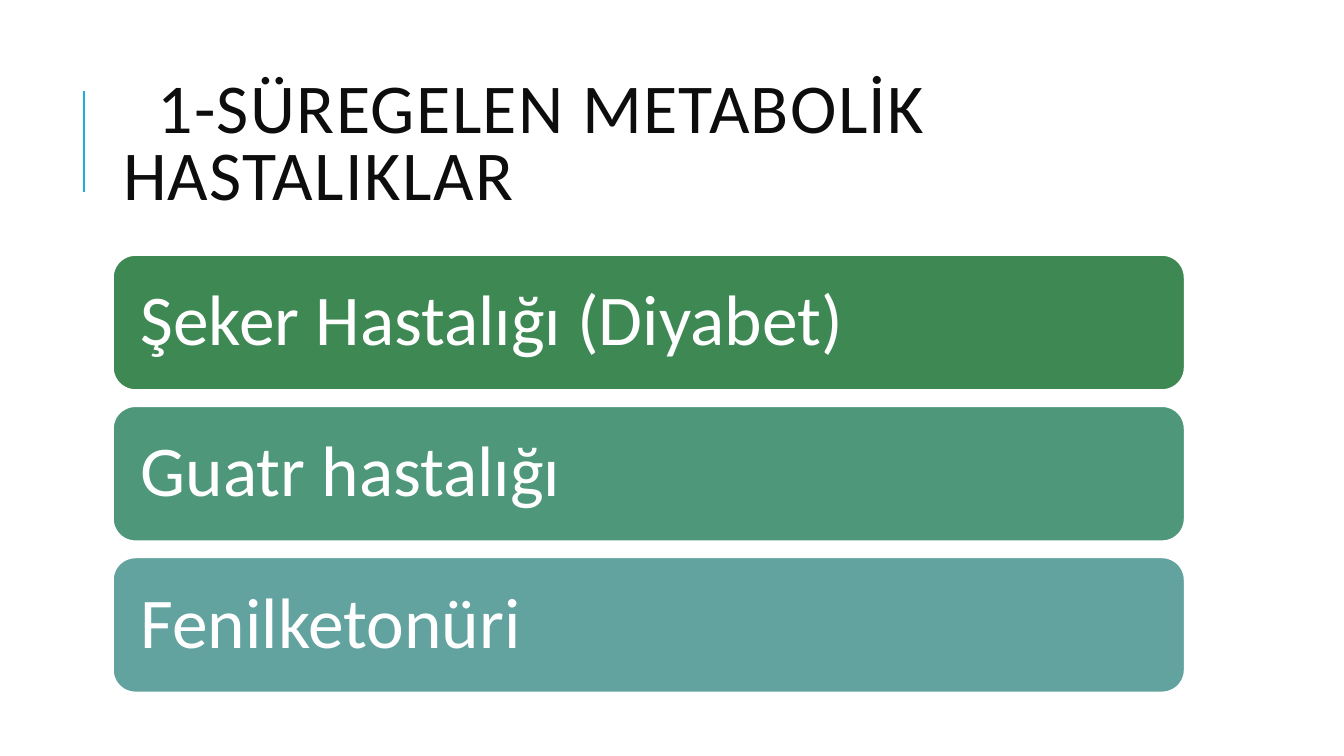
"""Build a slide listing three chronic metabolic diseases."""
import pptx
import pptx.dml.color
import pptx.enum.shapes
import pptx.enum.text
import pptx.oxml.ns
import pptx.util
from lxml import etree

Inches = pptx.util.Inches
Pt = pptx.util.Pt

TITLE = "1-SÜREGELEN METABOLİK HASTALIKLAR"
DISEASES = [
    ("Şeker Hastalığı (Diyabet)", "green"),
    ("Guatr hastalığı", "sea"),
    ("Fenilketonüri", "teal"),
]
COLORS = {
    "green": "3E8853",
    "sea": "4E977B",
    "teal": "62A39F",
    "accent": "1CADE4",
    "ink": "0D0D0D",
    "white": "FFFFFF",
}
FONT = "Calibri"
LEFT, WIDTH = 1.12, 10.63
BAR_TOP, BAR_HEIGHT, BAR_STEP = 2.53, 1.34, 1.5


def color(name):
    return pptx.dml.color.RGBColor.from_string(COLORS[name])


def write(shape, text, size, ink, spacing):
    frame = shape.text_frame
    frame.text = text
    frame.word_wrap = True
    frame.auto_size = pptx.enum.text.MSO_AUTO_SIZE.NONE
    frame.vertical_anchor = pptx.enum.text.MSO_ANCHOR.MIDDLE
    para = frame.paragraphs[0]
    para.alignment = pptx.enum.text.PP_ALIGN.LEFT
    para.line_spacing = spacing
    span = para.runs[0]
    span.font.name = FONT
    span.font.size = Pt(size)
    span.font.color.rgb = color(ink)
    return para


def add_title(slide):
    title = slide.shapes.title
    title.left, title.top = Inches(LEFT), Inches(0.64)
    title.width, title.height = Inches(WIDTH), Inches(1.64)
    para = write(title, TITLE, 50, "ink", 0.8)
    para._p.get_or_add_pPr().set("indent", str(Inches(0.34)))
    para.runs[0].font._element.set("spc", "100")


def add_accent(slide):
    line = slide.shapes.add_connector(
        pptx.enum.shapes.MSO_CONNECTOR.STRAIGHT,
        Inches(0.83), Inches(1.9), Inches(0.83), Inches(0.9))
    line.line.color.rgb = color("accent")
    line.line.width = Pt(1.5)
    etree.SubElement(line._element.spPr, pptx.oxml.ns.qn("a:effectLst"))


def add_bar(slide, index, text, fill):
    bar = slide.shapes.add_shape(
        pptx.enum.shapes.MSO_SHAPE.ROUNDED_RECTANGLE,
        Inches(LEFT), Inches(BAR_TOP + index * BAR_STEP),
        Inches(WIDTH), Inches(BAR_HEIGHT))
    bar.shadow.inherit = False
    bar.fill.solid()
    bar.fill.fore_color.rgb = color(fill)
    bar.line.color.rgb = color("white")
    bar.line.width = Pt(1.25)
    write(bar, text, 51, "white", 0.9)
    frame = bar.text_frame
    frame.margin_left = frame.margin_right = Inches(0.21)


def main():
    deck = pptx.Presentation()
    deck.slide_width, deck.slide_height = Inches(13.33), Inches(7.5)
    slide = deck.slides.add_slide(deck.slide_layouts.get_by_name("Title Only"))
    add_accent(slide)
    add_title(slide)
    for index, (text, fill) in enumerate(DISEASES):
        add_bar(slide, index, text, fill)
    deck.save("out.pptx")


if __name__ == "__main__":
    main()
